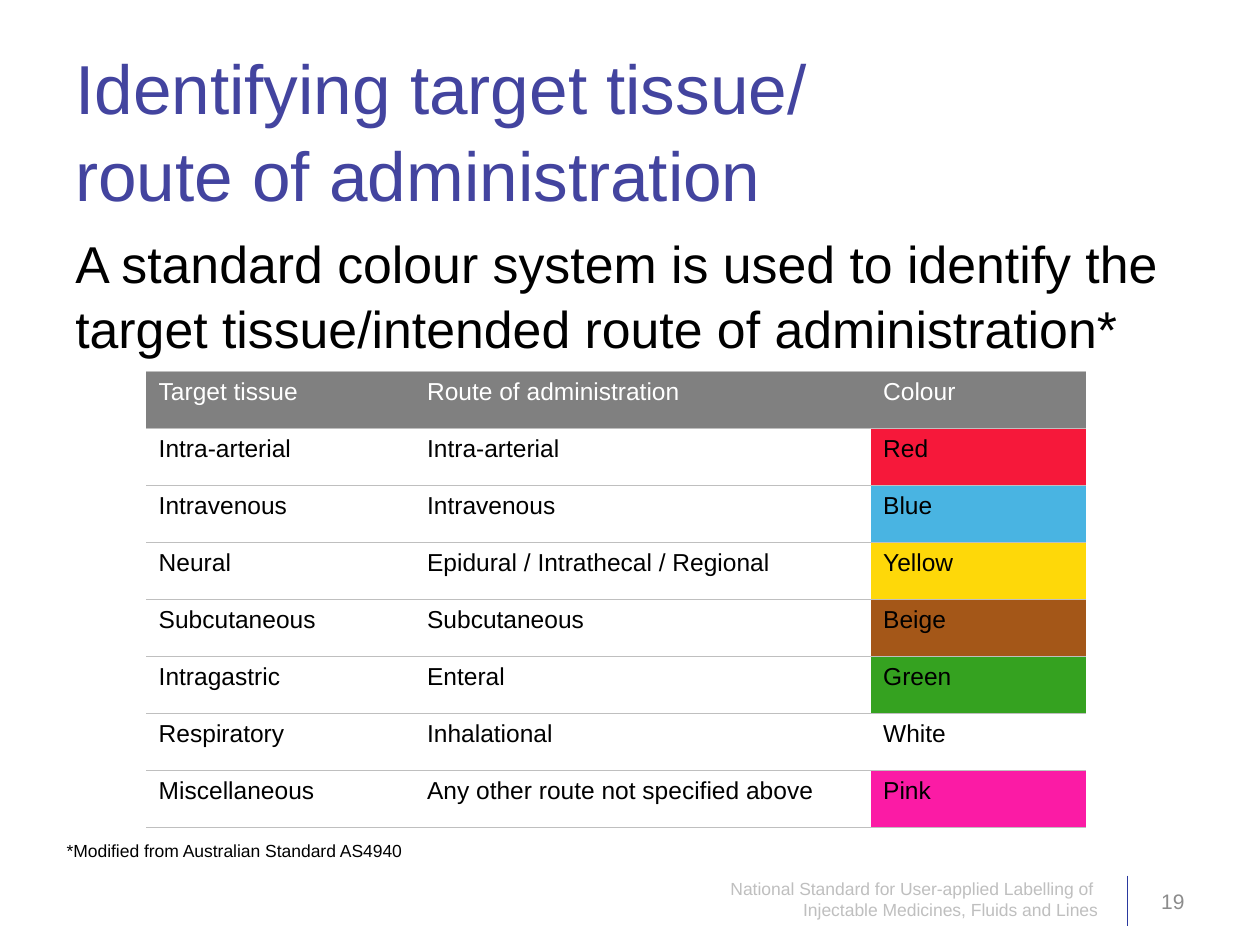
import pptx
import pptx.util
import pptx.dml.color
import pptx.enum.shapes
import pptx.enum.text
import pptx.oxml
import pptx.oxml.ns

Inches = pptx.util.Inches
ALIGN = pptx.enum.text.PP_ALIGN
ANCHOR = pptx.enum.text.MSO_ANCHOR


def rgb(value):
    return pptx.dml.color.RGBColor.from_string(value)


def write(frame, text, size, colour, align=ALIGN.LEFT, spacing=None):
    frame.text = text
    frame.word_wrap = True
    paragraph = frame.paragraphs[0]
    paragraph.alignment = align
    paragraph.line_spacing = spacing
    for run in paragraph.runs:
        run.font.size = pptx.util.Pt(size)
        run.font.name = "Arial"
        run.font.color.rgb = rgb(colour)


presentation = pptx.Presentation()
presentation.slide_width = Inches(10)
presentation.slide_height = Inches(7.5)
slide = presentation.slides.add_slide(presentation.slide_layouts[6])

footer_rule = slide.shapes.add_connector(
    pptx.enum.shapes.MSO_CONNECTOR.STRAIGHT,
    Inches(8.95), Inches(6.95), Inches(8.95), Inches(7.35))
footer_rule.line.color.rgb = rgb("2A399F")
footer_rule.line.width = pptx.util.Pt(0.75)
footer_rule._element.spPr.append(pptx.oxml.parse_xml(
    f"<a:effectLst {pptx.oxml.ns.nsdecls('a')}/>"))

passages = [
    ((0.5, 0.49, 9, 1.06), "Identifying target tissue/\vroute of administration",
     39.6, "43449F", ALIGN.LEFT, ANCHOR.MIDDLE, 1.05),
    ((0.5, 1.77, 9, 1.13),
     "A standard colour system is used to identify the target tissue/intended route of administration*",
     29.6, "000000", ALIGN.LEFT, ANCHOR.TOP, 1.04),
    ((4.1, 6.95, 4.71, 0.4),
     "National Standard for User-applied Labelling of \vInjectable Medicines, Fluids and Lines",
     10, "BFBFBF", ALIGN.RIGHT, ANCHOR.BOTTOM, None),
    ((9.06, 6.95, 0.44, 0.4), "19", 12, "8C8C8C", ALIGN.RIGHT, ANCHOR.MIDDLE, None),
    ((0.43, 6.53, 9.14, 0.35), "*Modified from Australian Standard AS4940",
     10, "000000", ALIGN.LEFT, ANCHOR.BOTTOM, None),
]
for place, text, size, colour, align, anchor, spacing in passages:
    passage = slide.shapes.add_textbox(*map(Inches, place)).text_frame
    write(passage, text, size, colour, align, spacing)
    passage.vertical_anchor = anchor

routes = [
    ("Target tissue", "Route of administration", "Colour", "808080"),
    ("Intra-arterial", "Intra-arterial", "Red", "F6183A"),
    ("Intravenous", "Intravenous", "Blue", "49B4E2"),
    ("Neural", "Epidural / Intrathecal / Regional", "Yellow", "FED809"),
    ("Subcutaneous", "Subcutaneous", "Beige", "A45718"),
    ("Intragastric", "Enteral", "Green", "35A220"),
    ("Respiratory", "Inhalational", "White", None),
    ("Miscellaneous", "Any other route not specified above", "Pink", "FB1BA5"),
]
route_table = slide.shapes.add_table(
    len(routes), 3, Inches(1.16), Inches(2.95), Inches(7.46), Inches(3.62)).table
route_table.horz_banding = False
route_table._tbl.tblPr.find(pptx.oxml.ns.qn("a:tableStyleId")).text = (
    "{2D5ABB26-0587-4C30-8999-92F81FD0307C}")
for column, width in zip(route_table.columns, (2.13, 3.62, 1.71)):
    column.width = Inches(width)

for row, (*labels, label_colour) in enumerate(routes):
    for column, label in enumerate(labels):
        cell = route_table.cell(row, column)
        write(cell.text_frame, label, 14, "000000" if row else "FFFFFF")
        for edge, width in (("lnT", 0.75 if row else 1), ("lnB", 0.75)):
            cell._tc.get_or_add_tcPr().append(pptx.oxml.parse_xml(
                f'<a:{edge} {pptx.oxml.ns.nsdecls("a")} w="{pptx.util.Pt(width)}">'
                f'<a:solidFill><a:srgbClr val="BFBFBF"/></a:solidFill></a:{edge}>'))
        if label_colour and (row == 0 or column == 2):
            cell.fill.solid()
            cell.fill.fore_color.rgb = rgb(label_colour)
        else:
            cell.fill.background()

presentation.save("out.pptx")
